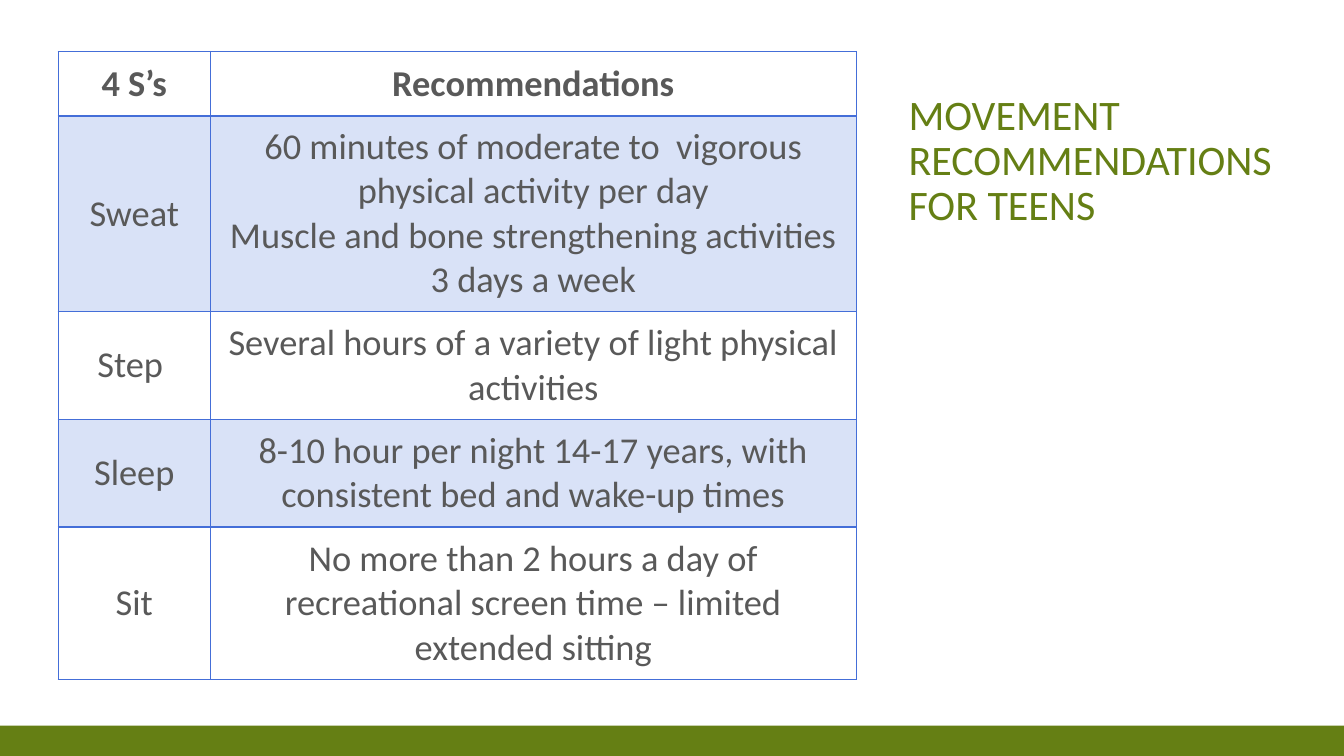
"""Build a slide with a table of movement recommendations for teens."""
from lxml import etree
from pptx import Presentation
from pptx import util as u
from pptx.dml.color import RGBColor
from pptx.enum import shapes, text
from pptx.oxml import ns

GREEN = RGBColor(0x65, 0x7F, 0x14)
BLUE = RGBColor(0x44, 0x6E, 0xD8)
GREY = RGBColor(0x59, 0x59, 0x59)

WIDTH, HEIGHT, BAND = 960, 540, 21.6
COLUMNS = [108.7, 461.5]
ROWS = [
    (46.1, "4 S’s", "Recommendations"),
    (139.7, "Sweat", "60 minutes of moderate to  vigorous physical activity per day\n"
                     "Muscle and bone strengthening activities 3 days a week"),
    (77, "Step ", "Several hours of a variety of light physical activities"),
    (77, "Sleep", "8-10 hour per night 14-17 years, with consistent bed and wake-up times"),
    (108.7, "Sit", "No more than 2 hours a day of recreational screen time – limited extended sitting"),
]


class SlideBuilder:
    """Hold the slide and its style, and add each kind of element."""

    font = "Calibri"

    def __init__(self, slide):
        """Keep the slide to draw on."""
        self.slide = slide

    def format_runs(self, frame, size, color, align, bold=False):
        """Apply alignment and font to all text in a frame."""
        for para in frame.paragraphs:
            para.alignment = align
            for span in para.runs:
                span.font.name = self.font
                span.font.size = u.Pt(size)
                span.font.bold = bold
                span.font.color.rgb = color

    def band(self, left, top, width, height, color):
        """Add a plain filled rectangle."""
        box = self.slide.shapes.add_shape(
            shapes.MSO_SHAPE.RECTANGLE, u.Pt(left), u.Pt(top), u.Pt(width), u.Pt(height))
        box.shadow.inherit = False
        box.fill.solid()
        box.fill.fore_color.rgb = color
        box.line.fill.background()

    def title(self, words, left, top, width, height):
        """Place and format the title placeholder."""
        box = self.slide.shapes.title
        box.left, box.top, box.width, box.height = map(u.Pt, (left, top, width, height))
        frame = box.text_frame
        frame.text = words
        frame.word_wrap = True
        frame.auto_size = text.MSO_AUTO_SIZE.NONE
        frame.vertical_anchor = text.MSO_ANCHOR.BOTTOM
        frame.paragraphs[0].line_spacing = 0.9
        self.format_runs(frame, 30, GREEN, text.PP_ALIGN.LEFT)

    def border(self, cell, side, width):
        """Draw one border of a cell."""
        line = etree.SubElement(cell._tc.get_or_add_tcPr(), ns.qn("a:ln" + side), w=str(u.Pt(width)))
        fill = etree.SubElement(line, ns.qn("a:solidFill"))
        etree.SubElement(fill, ns.qn("a:srgbClr"), val=str(BLUE))

    def cell(self, cell, words, row):
        """Fill and format one table cell."""
        cell.text = words
        cell.vertical_anchor = text.MSO_ANCHOR.MIDDLE
        cell.margin_left = cell.margin_right = u.Pt(10)
        cell.margin_top = cell.margin_bottom = u.Pt(5)
        self.format_runs(cell.text_frame, 26, GREY, text.PP_ALIGN.CENTER, bold=row == 0)
        for side in "LRTB":
            under_header = (row, side) in ((0, "B"), (1, "T"))
            self.border(cell, side, 2 if under_header else 1)
        if row % 2:
            cell.fill.solid()
            cell.fill.fore_color.rgb = BLUE
            color = cell._tc.tcPr.find(ns.qn("a:solidFill")).find(ns.qn("a:srgbClr"))
            etree.SubElement(color, ns.qn("a:alpha"), val="20000")
        else:
            cell.fill.background()

    def table(self, rows, columns, left, top):
        """Add a table with the given row heights and column widths."""
        height = sum(row[0] for row in rows)
        table = self.slide.shapes.add_table(
            len(rows), len(columns), u.Pt(left), u.Pt(top), u.Pt(sum(columns)), u.Pt(height)).table
        for column, width in zip(table.columns, columns):
            column.width = u.Pt(width)
        for row, (row_height, *entries) in enumerate(rows):
            table.rows[row].height = u.Pt(row_height)
            for column, words in enumerate(entries):
                self.cell(table.cell(row, column), words, row)


def main():
    """Build and save the deck."""
    deck = Presentation()
    deck.slide_width, deck.slide_height = u.Pt(WIDTH), u.Pt(HEIGHT)
    page = SlideBuilder(deck.slides.add_slide(deck.slide_layouts[5]))
    page.band(0, HEIGHT - BAND, WIDTH, BAND, GREEN)
    page.title("MOVEMENT RECOMMENDATIONS FOR TEENS", 641.8, 43.2, 276.5, 124.6)
    page.table(ROWS, COLUMNS, 41.6, 36.7)
    deck.save("out.pptx")


if __name__ == "__main__":
    main()
